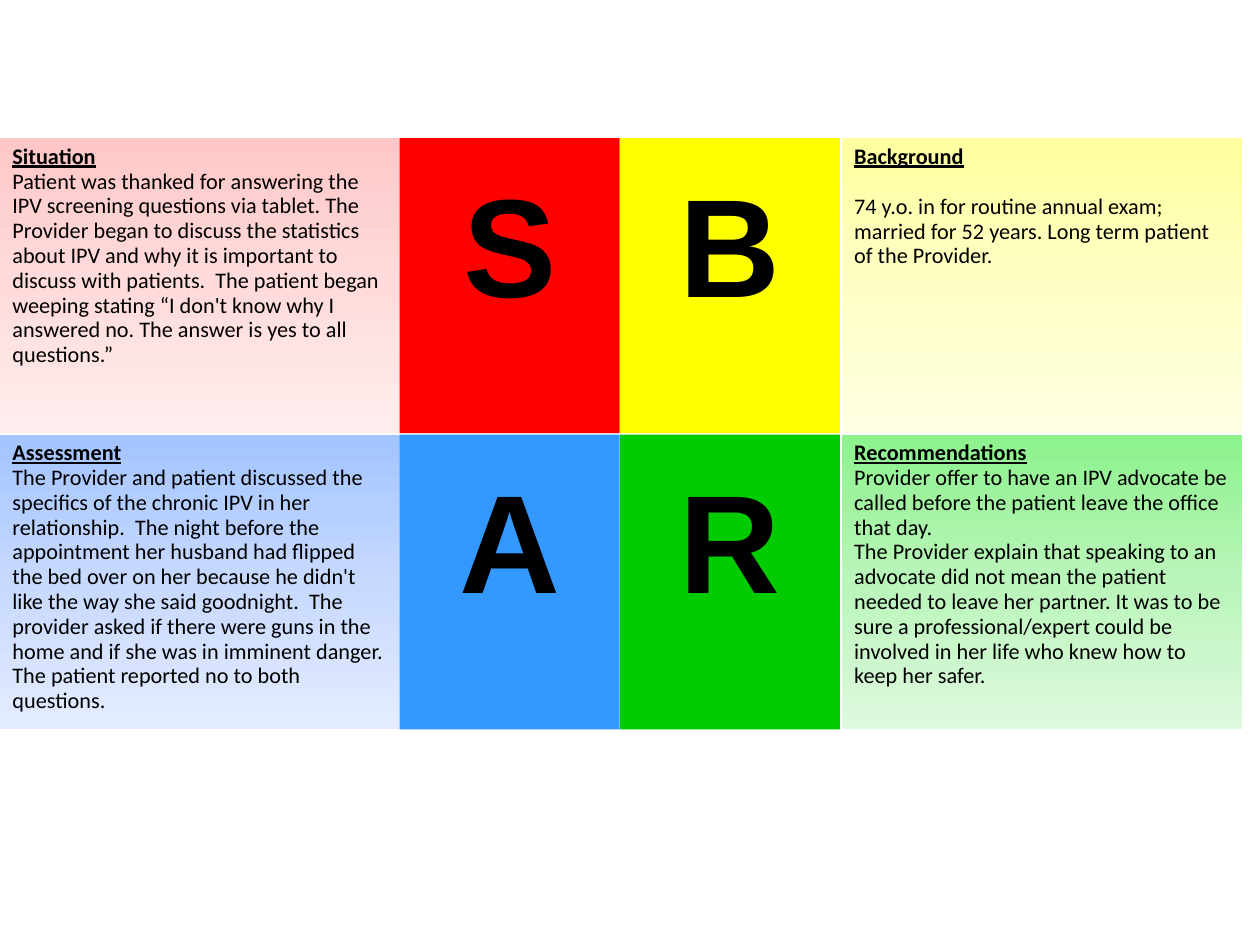
from copy import deepcopy

from pptx import Presentation
from pptx.dml.color import RGBColor
from pptx.enum.shapes import MSO_SHAPE as Shape
from pptx.enum.text import MSO_ANCHOR as Anchor, PP_ALIGN as Align
from pptx.oxml.ns import qn
from pptx.util import Pt

TILE_HEIGHT = 168.5
ROW_TOPS = (79, 248.4)
PANEL_LEFTS, PANEL_WIDTH = (0, 481), 228.6
LETTER_LEFTS, LETTER_WIDTH = (228.4, 354.2), 125.8

QUADRANTS = [
    ("S", "FF0000", ("FFC7C7", "FFDBDB", "FFEDED"), "Situation", 0, [
        "Patient was thanked for answering the IPV screening questions via tablet. The Provider began "
        "to discuss the statistics about IPV and why it is important to discuss with patients.  The "
        "patient began weeping stating “I don't know why I answered no. The answer is yes to all "
        "questions.”"]),
    ("B", "FFFF00", ("FFFFA0", "FFFFC5", "FFFFE3"), "Background", 14.4, [
        "74 y.o. in for routine annual exam; married for 52 years. Long term patient of the Provider."]),
    ("A", "3399FF", ("A3C4FF", "C7D9FF", "E4ECFF"), "Assessment", 0, [
        "The Provider and patient discussed the specifics of the chronic IPV in her relationship.  "
        "The night before the appointment her husband had flipped the bed over on her because he "
        "didn't like the way she said goodnight.  The provider asked if there were guns in the home "
        "and if she was in imminent danger. The patient reported no to both questions."]),
    ("R", "00CC00", ("8CF28C", "BAF5BA", "DEF9DE"), "Recommendations", 0, [
        "Provider offer to have an IPV advocate be called before the patient leave the office that day.",
        "The Provider explain that speaking to an advocate did not mean the patient needed to leave "
        "her partner. It was to be sure a professional/expert could be involved in her life who knew "
        "how to keep her safer."]),
]


def color(value):
    """Turn a hex string into a colour."""
    return RGBColor.from_string(value)


def add_tile(page, left, top, width):
    """Add a plain rectangle with top-anchored, wrapping text."""
    tile = page.shapes.add_shape(Shape.RECTANGLE, Pt(left), Pt(top), Pt(width), Pt(TILE_HEIGHT))
    tile.shadow.inherit = False
    tile.line.fill.background()
    tile.text_frame.word_wrap = True
    tile.text_frame.vertical_anchor = Anchor.TOP
    return tile


def set_font(para, name, size, bold):
    """Set the font of a whole paragraph in black."""
    font = para.font
    font.name, font.size, font.bold = name, Pt(size), bold
    font.color.rgb = color("000000")


def shade(tile, hexes):
    """Fill a tile with an even gradient from top to bottom."""
    fill = tile.fill
    fill.gradient()
    fill.gradient_angle = 270
    stop_list = next(tile._element.spPr.iter(qn("a:gsLst")))
    while len(stop_list) < len(hexes):
        stop_list.append(deepcopy(stop_list[-1]))
    for index, (stop, value) in enumerate(zip(fill.gradient_stops, hexes)):
        stop.position = index / (len(hexes) - 1)
        stop.color.rgb = color(value)


def add_letter(page, left, top, letter, fill):
    """Add a solid tile with one large letter."""
    tile = add_tile(page, left, top, LETTER_WIDTH)
    tile.fill.solid()
    tile.fill.fore_color.rgb = color(fill)
    tile.text_frame.margin_top = Pt(11)
    para = tile.text_frame.paragraphs[0]
    para.text = letter
    para.alignment = Align.CENTER
    set_font(para, "Arial", 79.8, True)


def add_panel(page, left, top, hexes, title, gap, texts):
    """Add a shaded panel with an underlined title and its text."""
    tile = add_tile(page, left, top, PANEL_WIDTH)
    shade(tile, hexes)
    frame = tile.text_frame
    for index, text in enumerate([title, *texts]):
        para = frame.add_paragraph() if index else frame.paragraphs[0]
        para.text = text
        para.alignment = Align.LEFT
        para.line_spacing = 0.93
        set_font(para, "Calibri", 12.7, index == 0)
    heading = frame.paragraphs[0]
    heading.font.underline = True
    heading.space_after = Pt(gap)


def main():
    """Build the SBAR slide."""
    deck = Presentation()
    deck.slide_width, deck.slide_height = Pt(720), Pt(540)
    page = deck.slides.add_slide(deck.slide_layouts[6])
    for index, (letter, fill, hexes, title, gap, texts) in enumerate(QUADRANTS):
        row, column = divmod(index, 2)
        add_panel(page, PANEL_LEFTS[column], ROW_TOPS[row], hexes, title, gap, texts)
        add_letter(page, LETTER_LEFTS[column], ROW_TOPS[row], letter, fill)
    deck.save("out.pptx")


if __name__ == "__main__":
    main()
